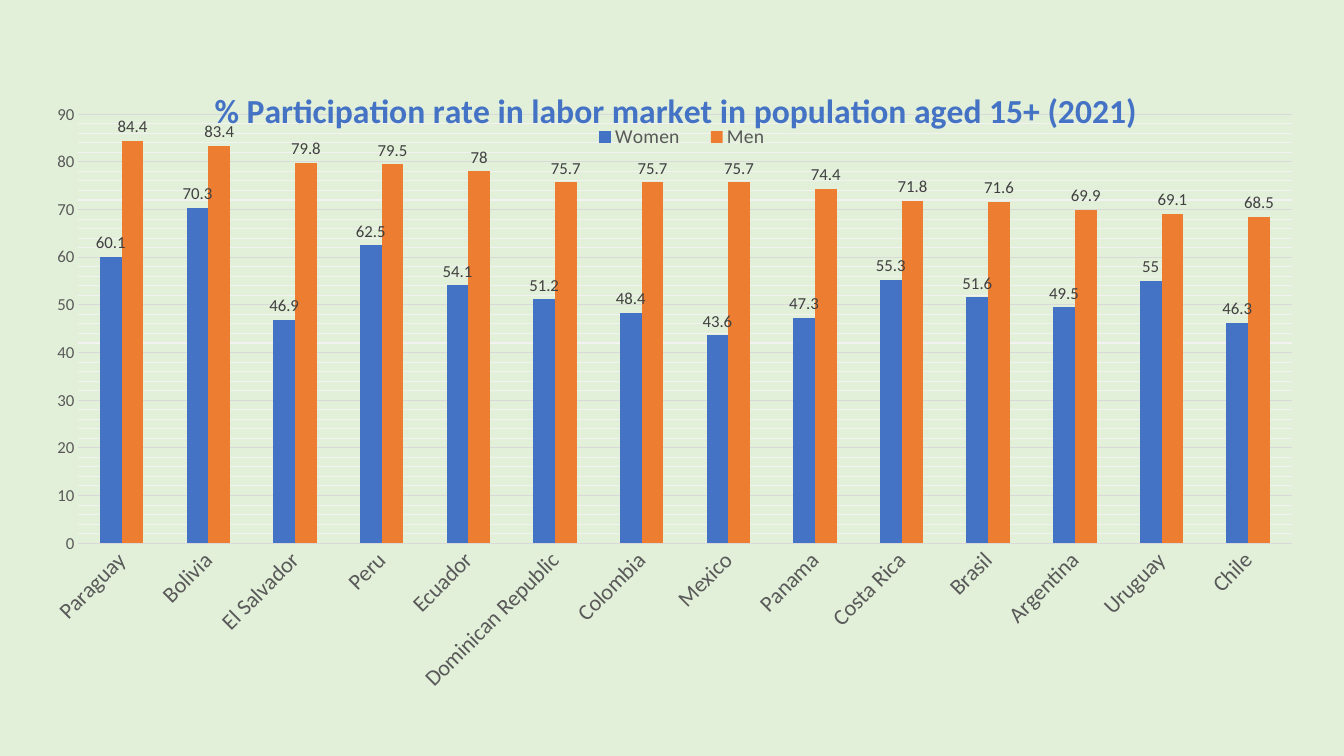
from dataclasses import dataclass

from pptx import Presentation
from pptx.chart.data import CategoryChartData
from pptx.dml.color import RGBColor
from pptx.enum.chart import (
    XL_CHART_TYPE as ChartType,
    XL_LABEL_POSITION as LabelPosition,
    XL_LEGEND_POSITION as LegendPosition,
    XL_TICK_MARK as TickMark,
)
from pptx.oxml import parse_xml
from pptx.oxml.ns import nsdecls, qn
from pptx.util import Inches, Pt


@dataclass(frozen=True)
class Theme:
    font: str = "Calibri"
    background: str = "E2F0D9"
    women: str = "4472C4"
    men: str = "ED7D31"
    title: str = "4472C4"
    axis_text: str = "595959"
    label_text: str = "404040"
    major_grid: str = "D9D9D9"
    minor_grid: str = "F2F2F2"
    title_size: int = 24
    country_size: int = 16
    legend_size: int = 14
    value_size: int = 12
    line_width: float = 0.75


THEME = Theme()
TITLE = "% Participation rate in labor market in population aged 15+ (2021)"

# Country: (women, men)
RATES = {
    "Paraguay": (60.1, 84.4),
    "Bolivia": (70.3, 83.4),
    "El Salvador": (46.9, 79.8),
    "Peru": (62.5, 79.5),
    "Ecuador": (54.1, 78),
    "Dominican Republic": (51.2, 75.7),
    "Colombia": (48.4, 75.7),
    "Mexico": (43.6, 75.7),
    "Panama": (47.3, 74.4),
    "Costa Rica": (55.3, 71.8),
    "Brasil": (51.6, 71.6),
    "Argentina": (49.5, 69.9),
    "Uruguay": (55, 69.1),
    "Chile": (46.3, 68.5),
}


def style_font(font, size, color, bold=False):
    for name, value in {"name": THEME.font, "size": Pt(size), "bold": bold}.items():
        setattr(font, name, value)
    font.color.rgb = RGBColor.from_string(color)


def style_line(line, color):
    line.color.rgb = RGBColor.from_string(color)
    line.width = Pt(THEME.line_width)


def place(part, inner=False, **fractions):
    """Give a chart part a fixed place, in fractions of the chart."""
    modes = "".join(f'<c:{axis}Mode val="edge"/>' for axis in "xy")
    target = '<c:layoutTarget val="inner"/>' if inner else ""
    values = "".join(f'<c:{key} val="{value}"/>' for key, value in fractions.items())
    layout = parse_xml(
        f'<c:layout {nsdecls("c")}><c:manualLayout>{target}{modes}{values}'
        "</c:manualLayout></c:layout>"
    )
    previous = part.find(qn("c:layout"))
    if previous is not None:
        part.remove(previous)
    overlay = part.find(qn("c:overlay"))
    if overlay is not None:
        overlay.addprevious(layout)
    else:
        part.insert(0, layout)


def add_rate_chart(slide):
    data = CategoryChartData(number_format="General")
    data.categories = list(RATES)
    for name, values in zip(("Women", "Men"), zip(*RATES.values())):
        data.add_series(name, values)
    frame = slide.shapes.add_chart(
        ChartType.COLUMN_CLUSTERED,
        Inches(0.44), Inches(0.62), Inches(12.52), Inches(6.42), data,
    )
    return frame.chart


def style_columns(chart):
    plot = chart.plots[0]
    for name, value in {"gap_width": 199, "overlap": 0, "vary_by_categories": False}.items():
        setattr(plot, name, value)
    for series, color in zip(plot.series, (THEME.women, THEME.men)):
        series.format.fill.solid()
        series.format.fill.fore_color.rgb = RGBColor.from_string(color)
        labels = series.data_labels
        labels.show_value = True
        labels.position = LabelPosition.OUTSIDE_END
        style_font(labels.font, THEME.value_size, THEME.label_text)


def style_axes(chart):
    countries, rates = chart.category_axis, chart.value_axis
    for axis, size in ((countries, THEME.country_size), (rates, THEME.value_size)):
        axis.major_tick_mark = axis.minor_tick_mark = TickMark.NONE
        style_font(axis.tick_labels.font, size, THEME.axis_text)
    style_line(countries.format.line, THEME.major_grid)
    rates.format.line.fill.background()

    scale = {
        "minimum_scale": 0, "maximum_scale": 90, "major_unit": 10, "minor_unit": 2,
        "has_major_gridlines": True, "has_minor_gridlines": True,
    }
    for name, value in scale.items():
        setattr(rates, name, value)
    style_line(rates.major_gridlines.format.line, THEME.major_grid)
    # Minor gridlines have no python-pptx object
    minor_grid = chart.element.xpath(".//c:valAx/c:minorGridlines")[0]
    minor_grid.append(parse_xml(
        f'<c:spPr {nsdecls("c", "a")}><a:ln w="{Pt(THEME.line_width)}"><a:solidFill>'
        f'<a:srgbClr val="{THEME.minor_grid}"/></a:solidFill></a:ln></c:spPr>'
    ))
    # Slant the country names by 45 degrees
    slant = chart.element.xpath(".//c:catAx/c:txPr/a:bodyPr")[0]
    slant.set("rot", "-2700000")
    slant.set("vert", "horz")


def add_title_and_legend(chart):
    chart.has_title = True
    heading = chart.chart_title.text_frame.paragraphs[0].add_run()
    heading.text = TITLE
    style_font(heading.font, THEME.title_size, THEME.title, bold=True)

    chart.has_legend = True
    chart.legend.position = LegendPosition.TOP
    chart.legend.include_in_layout = False
    style_font(chart.legend.font, THEME.legend_size, THEME.axis_text)


def arrange(chart):
    places = {
        "title": {"x": 0.13, "y": 0.03},
        "plotArea": {"inner": True, "x": 0.027, "y": 0.08, "w": 0.961, "h": 0.663},
        "legend": {"x": 0.42, "y": 0.09, "w": 0.17, "h": 0.05},
    }
    for part, spot in places.items():
        place(chart.element.xpath(f"c:chart/c:{part}")[0], **spot)


def main():
    deck = Presentation()
    deck.slide_width, deck.slide_height = Inches(13.33), Inches(7.5)
    slide = deck.slides.add_slide(deck.slide_layouts.get_by_name("Blank"))
    slide.background.fill.solid()
    slide.background.fill.fore_color.rgb = RGBColor.from_string(THEME.background)

    # Participation chart
    chart = add_rate_chart(slide)
    style_font(chart.font, THEME.value_size, THEME.axis_text)
    style_columns(chart)
    style_axes(chart)
    add_title_and_legend(chart)
    arrange(chart)

    deck.save("out.pptx")


if __name__ == "__main__":
    main()
